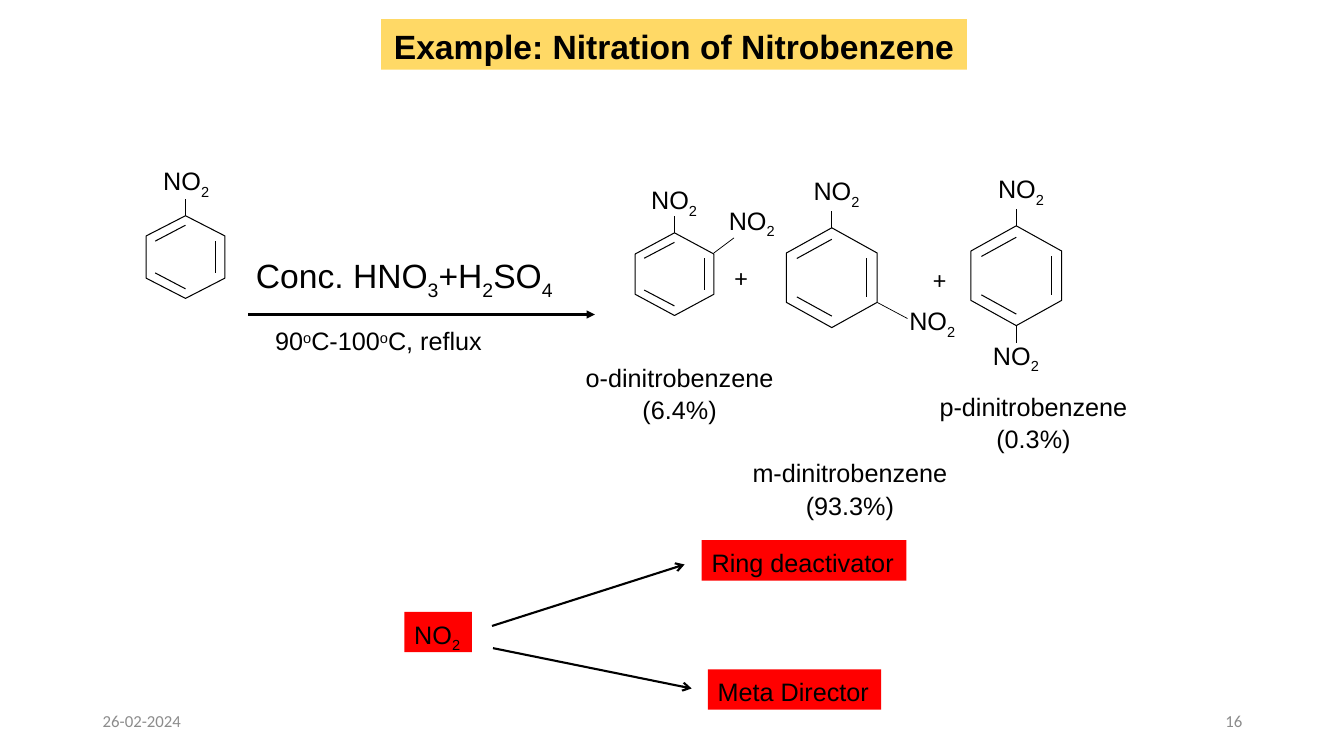
from lxml.etree import SubElement
from pptx import Presentation
from pptx.dml.color import RGBColor
from pptx.enum.shapes import MSO_CONNECTOR, MSO_SHAPE
from pptx.enum.text import MSO_ANCHOR, PP_ALIGN
from pptx.oxml.ns import qn
from pptx.util import Pt

PX = 9144  # EMU in one px, 100 px to the inch
LEFT, MID, RIGHT = PP_ALIGN.LEFT, PP_ALIGN.CENTER, PP_ALIGN.RIGHT
BLACK, RED, GOLD, GREY = "000000", "FF0000", "FFD966", "8C8C8C"
SHIFT = {"_": "-25000", "^": "30000"}
NITRO = ("NO", "_2")


def emu(*nums):
    return [round(num * PX) for num in nums]


def paint(color, code):
    color.rgb = RGBColor.from_string(code)


def write(frame, lines, size=18, face="Arial", code=BLACK, align=LEFT,
          anchor=MSO_ANCHOR.TOP, bold=False, gap=1.07):
    """Fill a frame; a run starting with _ is lowered, with ^ raised."""
    frame.word_wrap = True
    frame.vertical_anchor = anchor
    for num, parts in enumerate(lines):
        para = frame.add_paragraph() if num else frame.paragraphs[0]
        para.alignment = align
        para.line_spacing = gap
        for part in parts:
            run = para.add_run()
            run.text = part.lstrip("_^")
            run.font.size = Pt(size)
            run.font.name = face
            run.font.bold = bold
            paint(run.font.color, code)
            if part[0] in SHIFT:
                run.font._element.set("baseline", SHIFT[part[0]])


def label(slide, box, *lines, **style):
    write(slide.shapes.add_textbox(*emu(*box)).text_frame, lines, **style)


def panel(slide, box, *parts):
    shape = slide.shapes.add_shape(MSO_SHAPE.RECTANGLE, *emu(*box))
    shape.shadow.inherit = False
    shape.fill.solid()
    paint(shape.fill.fore_color, RED)
    shape.line.fill.background()
    write(shape.text_frame, [parts])


def line(slide, start, end, width=0.75, head=None):
    link = slide.shapes.add_connector(
        MSO_CONNECTOR.STRAIGHT, *emu(*start, *end))
    paint(link.line.color, BLACK)
    link.line.width = Pt(width)
    if head:
        SubElement(link.line._get_or_add_ln(), qn("a:tailEnd"), type=head)
    SubElement(link._element.spPr, qn("a:effectLst"))


def corners(x, y, half, tall):
    """Six points of a hexagon around its centre, clockwise from the top."""
    return [(x, y - tall / 2), (x + half, y - tall / 4),
            (x + half, y + tall / 4), (x, y + tall / 2),
            (x - half, y + tall / 4), (x - half, y - tall / 4)]


def ring(slide, x, top, half, tall):
    """Benzene ring with three inner bonds and a bond up from the top."""
    mid = top + tall / 2
    outer = corners(x, mid, half, tall)
    inner = corners(x, mid, half * 0.77, tall * 0.77)
    path = slide.shapes.build_freeform(*outer[0], scale=PX)
    path.add_line_segments(outer[1:], close=True)
    shape = path.convert_to_shape()
    shape.shadow.inherit = False
    shape.fill.background()
    paint(shape.line.color, BLACK)
    shape.line.width = Pt(0.75)
    for num in (1, 3, 5):
        line(slide, inner[num], inner[(num + 1) % 6])
    line(slide, (x, top), (x, top - 17))


def heading(slide):
    title = slide.shapes.title
    title.left, title.top, title.width, title.height = emu(378, 19, 581, 50)
    title.fill.solid()
    paint(title.fill.fore_color, GOLD)
    write(title.text_frame, [["Example: Nitration of Nitrobenzene"]], size=24,
          align=MID, anchor=MSO_ANCHOR.MIDDLE, bold=True)


def reaction(slide):
    for x, top, half, tall in ((184, 214, 39, 82), (669, 231, 39, 82),
                               (825, 226, 45, 99), (1008, 224, 45, 99)):
        ring(slide, x, top, half, tall)
    line(slide, (708, 251), (728, 236), 0.5)
    line(slide, (870, 300), (900, 316), 0.5)
    line(slide, (1008, 323), (1008, 340))
    for x, y in ((152, 157), (636, 176), (713, 196), (797, 167),
                 (892, 296), (980, 165), (975, 330)):
        label(slide, (x, y, 72, 45), NITRO)
    for x, y in ((719, 253), (916, 255)):
        label(slide, (x, y, 35, 45), ["+"], face="Calibri")
    line(slide, (246, 312), (590, 312), 1.5, "triangle")
    label(slide, (244, 245, 344, 67),
          ("Conc. HNO", "_3", "+H", "_2", "SO", "_4"), size=24)
    label(slide, (263, 316, 245, 45),
          ("90", "^o", "C-100", "^o", "C, reflux"))
    for box, name, share in (
            ((563, 352, 222, 78), "o-dinitrobenzene", "(6.4%)"),
            ((728, 447, 230, 78), "m-dinitrobenzene", "(93.3%)"),
            ((921, 381, 208, 71), "p-dinitrobenzene", "(0.3%)")):
        label(slide, box, [name], [share], align=MID)


def effects(slide):
    panel(slide, (401, 607, 67, 40), *NITRO)
    line(slide, (488, 621), (679, 560), 1.5, "arrow")
    line(slide, (489, 643), (686, 683), 1.5, "arrow")
    panel(slide, (696, 536, 203, 40), "Ring deactivator")
    panel(slide, (702, 664, 172, 40), "Meta Director")


def footer(slide):
    for x, text, align in ((92, "26-02-2024", LEFT), (942, "16", RIGHT)):
        label(slide, (x, 695, 300, 40), [text], size=12, face="Calibri",
              code=GREY, align=align, anchor=MSO_ANCHOR.MIDDLE, gap=1.0)


def main():
    deck = Presentation()
    deck.slide_width, deck.slide_height = emu(1333, 750)
    slide = deck.slides.add_slide(deck.slide_layouts[5])
    heading(slide)
    reaction(slide)
    effects(slide)
    footer(slide)
    deck.save("out.pptx")


if __name__ == "__main__":
    main()
